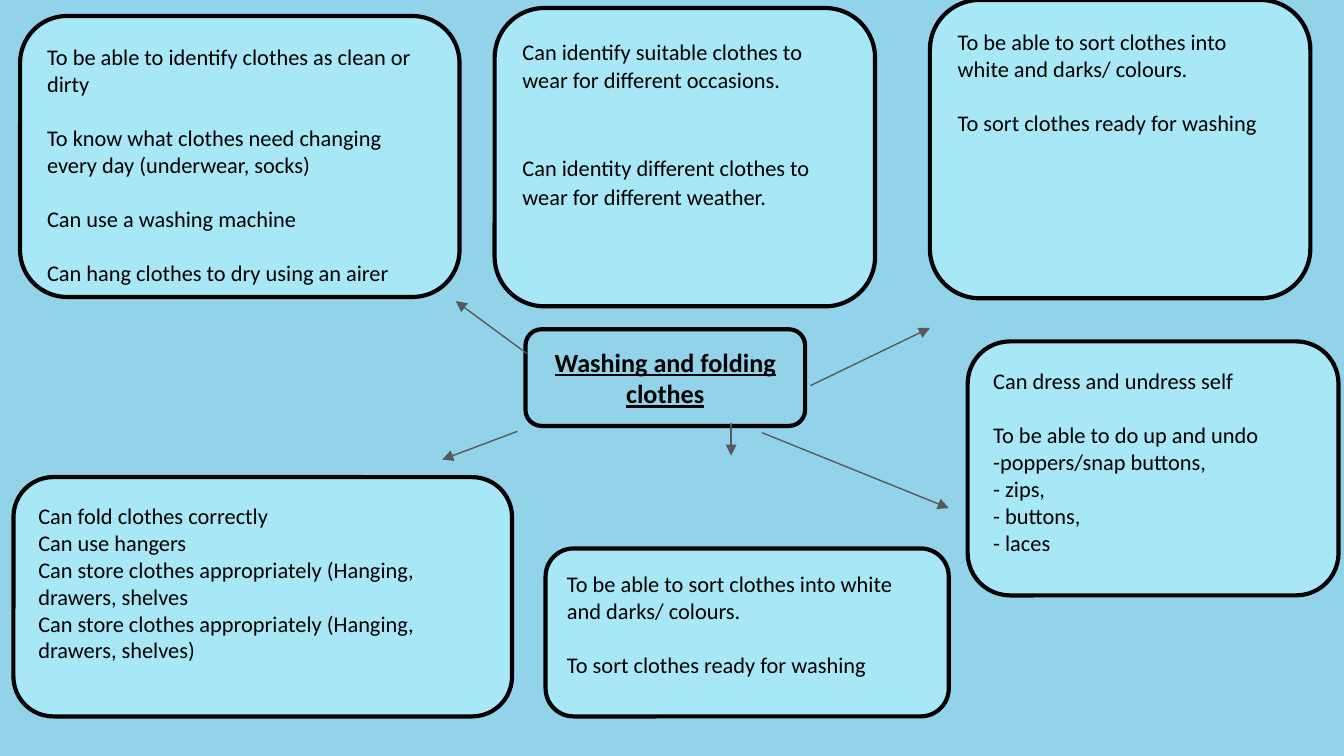
from lxml.etree import SubElement
from pptx import Presentation
from pptx.dml.color import RGBColor
from pptx.enum.shapes import MSO_CONNECTOR, MSO_SHAPE
from pptx.enum.text import MSO_ANCHOR, PP_ALIGN
from pptx.oxml.ns import qn
from pptx.util import Pt

SKY = RGBColor(0x92, 0xD3, 0xEA)
PALE = RGBColor(0xBA, 0xF8, 0xFF)
BLACK = RGBColor(0, 0, 0)
GREY = RGBColor(0x59, 0x59, 0x59)

BODY = {"size": Pt(12), "name": "Calibri"}
HEADING = {"size": Pt(14), "name": "Calibri", "bold": True, "underline": True}
FRAME = {"word_wrap": True, "margin_left": Pt(7.2), "margin_right": Pt(7.2),
         "margin_top": Pt(7.2), "margin_bottom": Pt(7.2)}
SINGLE = {"line_spacing": 1.0, "gap": 14.6}
LOOSE = {"line_spacing": 1.07, "gap": 31.4}

# Each box holds groups of lines; a gap opens before every group but the first.
SORTING = [["To be able to sort clothes into white and darks/ colours."],
           ["To sort clothes ready for washing"]]
CLEANING = [["To be able to identify clothes as clean or dirty"],
            ["To know what clothes need changing every day (underwear, socks)"],
            ["Can use a washing machine"],
            ["Can hang clothes to dry using an airer"]]
CHOOSING = [["Can identify suitable clothes to wear for different occasions."],
            ["Can identity different clothes to wear for different weather."]]
DRESSING = [["Can dress and undress self"],
            ["To be able to do up and undo", "-poppers/snap buttons,",
             "- zips,", "- buttons,", "- laces"]]
STORING = [["Can fold clothes correctly", "Can use hangers",
            "Can store clothes appropriately (Hanging, drawers, shelves",
            "Can store clothes appropriately (Hanging, drawers, shelves)"]]

SKILL_BOXES = [
    ((10.8, 8.6, 235.4, 150.5), CLEANING, SINGLE),
    ((498.2, 0, 203.8, 159.8), SORTING, SINGLE),
    ((518.4, 182.9, 198.7, 136.1), DRESSING, SINGLE),
    ((7.2, 255.6, 267.1, 128.2), STORING, SINGLE),
    ((292.3, 293.8, 216, 90), SORTING, SINGLE),
    ((265, 4.3, 203.8, 159.8), CHOOSING, LOOSE),
]
ARROWS = [
    (408.2, 231.8, 508.3, 272.2),
    (434.2, 206.6, 498.2, 175.7),
    (277.2, 231.1, 236.9, 246.2),
    (282.2, 189.4, 244.1, 161.3),
    (391.7, 226.8, 391.7, 244.1),
]


def add_box(s, place, fill):
    sp = s.shapes.add_shape(MSO_SHAPE.ROUNDED_RECTANGLE, *[Pt(v) for v in place])
    sp.shadow.inherit = False
    sp.fill.solid()
    sp.fill.fore_color.rgb = fill
    sp.line.color.rgb = BLACK
    sp.line.width = Pt(2.25)
    for key, value in FRAME.items():
        setattr(sp.text_frame, key, value)
    return sp


def write(p, text, font, align):
    p.alignment = align
    r = p.add_run()
    r.text = text
    r.font.color.rgb = BLACK
    for key, value in font.items():
        setattr(r.font, key, value)


prs = Presentation()
prs.slide_width, prs.slide_height = Pt(720), Pt(405)
s = prs.slides.add_slide(prs.slide_layouts[6])
s.background.fill.solid()
s.background.fill.fore_color.rgb = SKY

# Central topic
sp = add_box(s, (281.5, 176.4, 149.8, 69.1 - 17.3), SKY)
sp.text_frame.vertical_anchor = MSO_ANCHOR.MIDDLE
write(sp.text_frame.paragraphs[0], "Washing and folding clothes", HEADING, PP_ALIGN.CENTER)

# Skills around it
for place, groups, spacing in SKILL_BOXES:
    sp = add_box(s, place, PALE)
    color = sp.fill._xPr.find(qn("a:solidFill")).find(qn("a:srgbClr"))
    SubElement(color, qn("a:alpha"), val="56000")
    tf = sp.text_frame
    tf.vertical_anchor = MSO_ANCHOR.TOP
    p = tf.paragraphs[0]
    for g, group in enumerate(groups):
        for i, line in enumerate(group):
            if g or i:
                p = tf.add_paragraph()
            if g and i == 0:
                p.space_before = Pt(spacing["gap"])
            p.line_spacing = spacing["line_spacing"]
            write(p, line, BODY, PP_ALIGN.LEFT)

# Arrows from the topic to the skills
for ends in ARROWS:
    arrow = s.shapes.add_connector(MSO_CONNECTOR.STRAIGHT, *[Pt(v) for v in ends])
    arrow.line.color.rgb = GREY
    arrow.line.width = Pt(0.75)
    SubElement(arrow.line._get_or_add_ln(), qn("a:tailEnd"), type="triangle")
    SubElement(arrow._element.spPr, qn("a:effectLst"))

prs.save("out.pptx")
